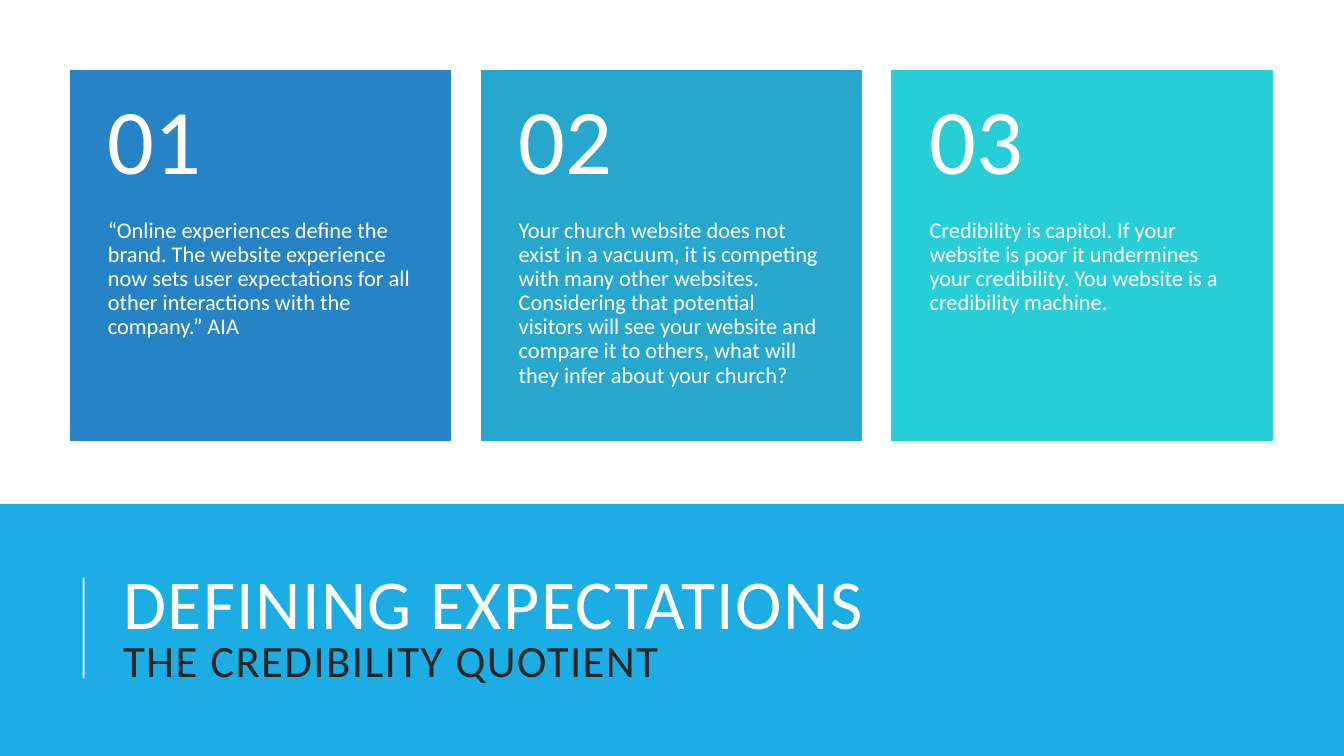
from dataclasses import dataclass
from typing import Any

from lxml import etree
from pptx import Presentation
from pptx import util as u
from pptx.dml.color import RGBColor
from pptx.enum import shapes, text
from pptx.oxml import ns

FONT = "Calibri"
WHITE = "FFFFFF"
CARD_LEFT, CARD_TOP, CARD_STEP = 0.7, 0.7, 4.075
CARD_WIDTH, NUMBER_HEIGHT, MESSAGE_HEIGHT = 3.77, 1.47, 2.2


@dataclass(frozen=True)
class Card:
    message: str
    color: str


CARDS = [
    Card("“Online experiences define the brand. The website experience now sets "
         "user expectations for all other interactions with the company.” AIA", "2683C6"),
    Card("Your church website does not exist in a vacuum, it is competing with many "
         "other websites. Considering that potential visitors will see your website and "
         "compare it to others, what will they infer about your church?", "27A7CE"),
    Card("Credibility is capitol. If your website is poor it undermines your "
         "credibility. You website is a credibility machine.", "27CED7"),
]


def rgb(color: str) -> RGBColor:
    return RGBColor.from_string(color)


def apply_format(target: Any, values: dict[str, Any]) -> None:
    for name, value in values.items():
        setattr(target, name, value)


def box(left: float, top: float, width: float, height: float) -> list[u.Length]:
    return [u.Inches(value) for value in (left, top, width, height)]


def add_run(paragraph: Any, words: str, size: float, color: str) -> Any:
    run = paragraph.add_run()
    run.text = words
    apply_format(run.font, {"name": FONT, "size": u.Pt(size), "bold": False})
    run.font.color.rgb = rgb(color)
    return run


def add_panel(parent: Any, place: list[u.Length], color: str, outlined: bool) -> Any:
    panel = parent.add_shape(shapes.MSO_SHAPE.RECTANGLE, *place)
    panel.shadow.inherit = False
    panel.fill.solid()
    panel.fill.fore_color.rgb = rgb(color)
    if outlined:
        panel.line.color.rgb = rgb(color)
        panel.line.width = u.Pt(1.25)
    else:
        panel.line.fill.background()
    return panel


def add_card_text(parent: Any, place: list[u.Length], words: str, size: float,
                  anchor: Any, inset_top: float, inset_bottom: float) -> None:
    frame = parent.add_textbox(*place).text_frame
    apply_format(frame, {
        "word_wrap": True, "vertical_anchor": anchor,
        "margin_left": u.Inches(0.37), "margin_right": u.Inches(0.37),
        "margin_top": u.Inches(inset_top), "margin_bottom": u.Inches(inset_bottom),
    })
    paragraph = frame.paragraphs[0]
    paragraph.line_spacing = 0.9
    add_run(paragraph, words, size, WHITE)


def add_card(parent: Any, index: int, card: Card) -> None:
    left = CARD_LEFT + index * CARD_STEP
    add_panel(parent, box(left, CARD_TOP, CARD_WIDTH, NUMBER_HEIGHT + MESSAGE_HEIGHT),
              card.color, True)
    add_card_text(parent, box(left, CARD_TOP + NUMBER_HEIGHT, CARD_WIDTH, MESSAGE_HEIGHT),
                  card.message, 16, text.MSO_ANCHOR.TOP, 0, 0.36)
    add_card_text(parent, box(left, CARD_TOP, CARD_WIDTH, NUMBER_HEIGHT),
                  f"{index + 1:02}", 66, text.MSO_ANCHOR.MIDDLE, 0.18, 0.18)


def add_accent(parent: Any) -> Any:
    accent = parent.add_connector(shapes.MSO_CONNECTOR.STRAIGHT,
                                  *box(0.83, 6.73, 0.83, 5.73))
    accent.line.color.rgb = rgb(WHITE)
    accent.line.width = u.Pt(1.5)
    properties = accent.element.spPr
    color = properties.find(".//" + ns.qn("a:srgbClr"))
    etree.SubElement(color, ns.qn("a:alpha"), val="80000")
    etree.SubElement(properties, ns.qn("a:effectLst"))
    return accent


def write_title(title: Any) -> None:
    left, top, width, height = box(1.12, 5.44, 10.63, 1.64)
    apply_format(title, {"left": left, "top": top, "width": width, "height": height})
    apply_format(title.text_frame, {
        "word_wrap": True, "auto_size": text.MSO_AUTO_SIZE.NONE,
        "vertical_anchor": text.MSO_ANCHOR.MIDDLE,
    })
    paragraph = title.text_frame.paragraphs[0]
    apply_format(paragraph, {"alignment": text.PP_ALIGN.LEFT, "line_spacing": 0.8})
    heading = add_run(paragraph, "DEFINING EXPECTATIONS", 50, WHITE)
    paragraph.add_line_break()
    subheading = add_run(paragraph, "THE CREDIBILITY QUOTIENT", 32, "262626")
    for run in (heading, subheading):
        run.font._element.set("spc", "100")


def main() -> None:
    deck = Presentation()
    apply_format(deck, {"slide_width": u.Inches(13.33), "slide_height": u.Inches(7.5)})
    slide = deck.slides.add_slide(deck.slide_layouts[5])
    title = slide.shapes.title

    # Title band, placed behind the title
    band = add_panel(slide.shapes, box(0, 5, 13.33, 2.5), "1CADE4", False)
    accent = add_accent(slide.shapes)
    for backdrop in (band, accent):
        title.element.addprevious(backdrop.element)
    write_title(title)

    # Numbered cards
    cards = slide.shapes.add_group_shape().shapes
    for index, card in enumerate(CARDS):
        add_card(cards, index, card)

    deck.save("out.pptx")


if __name__ == "__main__":
    main()
